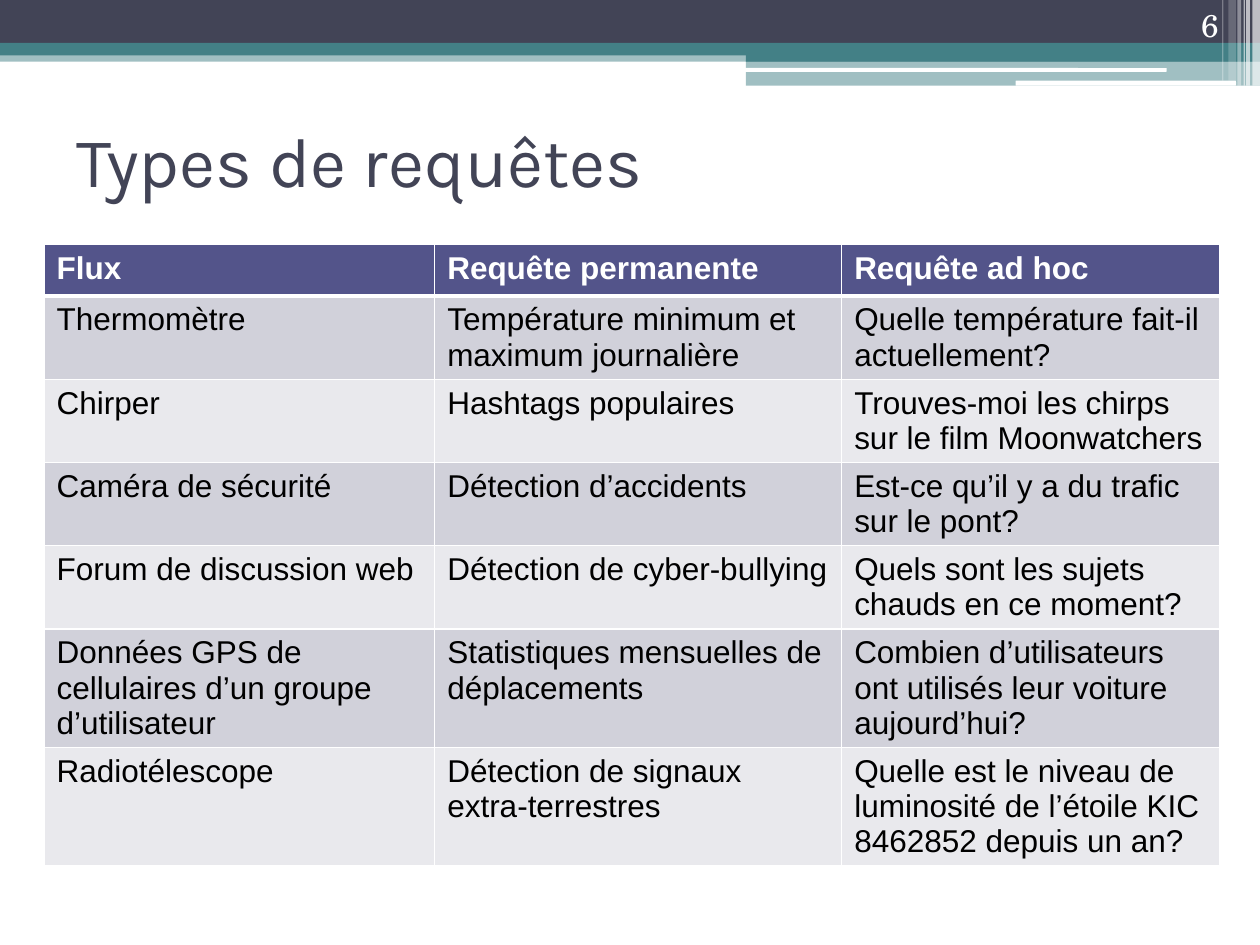
from lxml import etree
from pptx import Presentation
from pptx import util as u
from pptx.dml.color import RGBColor
from pptx.enum import shapes, text
from pptx.oxml.ns import qn

WHITE = RGBColor(0xFF, 0xFF, 0xFF)
BLACK = RGBColor(0, 0, 0)
SLATE = RGBColor(0x42, 0x44, 0x56)
TEAL = RGBColor(0x43, 0x80, 0x86)
INDIGO = RGBColor(0x53, 0x54, 0x8A)
ROW_FILLS = (RGBColor(0xE9, 0xE9, 0xED), RGBColor(0xD1, 0xD1, 0xDA))

COLS, ROWS = 10, 7.5
BANDS = [
    (0, 0.4, 10, 0.09, TEAL, 50),
    (0, 0, 10, 0.34, SLATE, 100),
    (0, 0.34, 10, 0.1, TEAL, 100),
    (5.92, 0.39, 4.08, 0.1, TEAL, 100),
    (5.92, 0.48, 4.08, 0.2, TEAL, 50),
]
PILLS = [(5.91, 0.54, 3.35, 0.03), (8.06, 0.64, 1.75, 0.04)]
STRIPES = [
    (9.94, 0.06, 0.68, 65),
    (9.89, 0.03, 0.68, 65),
    (9.87, 0.01, 0.68, 60),
    (9.82, 0.03, 0.68, 40),
    (9.75, 0.06, 0.64, 20),
    (9.7, 0.01, 0.64, 30),
]
QUERIES = [
    ("Flux", "Requête permanente", "Requête ad hoc"),
    ("Thermomètre", "Température minimum et maximum journalière",
     "Quelle température fait-il actuellement?"),
    ("Chirper", "Hashtags populaires",
     "Trouves-moi les chirps sur le film Moonwatchers"),
    ("Caméra de sécurité", "Détection d’accidents",
     "Est-ce qu’il y a du trafic sur le pont?"),
    ("Forum de discussion web", "Détection de cyber-bullying",
     "Quels sont les sujets chauds en ce moment?"),
    ("Données GPS de cellulaires d’un groupe d’utilisateur",
     "Statistiques mensuelles de déplacements",
     "Combien d’utilisateurs ont utilisés leur voiture aujourd’hui?"),
    ("Radiotélescope", "Détection de signaux extra-terrestres",
     "Quelle est le niveau de luminosité de l’étoile KIC 8462852 depuis un an?"),
]


class Deck:
    """Holds the style and the current slide, on a grid of 10 columns by 7.5 rows."""

    def __init__(self):
        self.prs = Presentation()
        self.prs.slide_width, self.prs.slide_height = u.Inches(COLS), u.Inches(ROWS)
        self.s = self.prs.slides.add_slide(self.prs.slide_layouts[5])

    def box(self, x, y, w, h):
        width, height = self.prs.slide_width, self.prs.slide_height
        return (int(width * x / COLS), int(height * y / ROWS),
                int(width * w / COLS), int(height * h / ROWS))

    def set_text(self, tf, words, font, size, color, bold=False,
                 align=text.PP_ALIGN.LEFT):
        tf.text = words
        p = tf.paragraphs[0]
        p.alignment = align
        r = p.runs[0]
        r.font.name, r.font.size, r.font.bold = font, u.Pt(size), bold
        r.font.color.rgb = color

    def band(self, x, y, w, h, color, opacity=100, rounded=False):
        kind = shapes.MSO_SHAPE.ROUNDED_RECTANGLE if rounded else shapes.MSO_SHAPE.RECTANGLE
        sp = self.s.shapes.add_shape(kind, *self.box(x, y, w, h))
        sp.shadow.inherit = False
        sp.line.fill.background()
        sp.fill.solid()
        sp.fill.fore_color.rgb = color
        if opacity < 100:
            clr = sp._element.spPr.find(".//" + qn("a:srgbClr"))
            etree.SubElement(clr, qn("a:alpha"), val=str(opacity * 1000))

    def title(self, words, *area):
        sp = self.s.shapes.title
        sp.left, sp.top, sp.width, sp.height = self.box(*area)
        self.set_text(sp.text_frame, words, "Karla", 40, SLATE)
        sp.text_frame.vertical_anchor = text.MSO_ANCHOR.MIDDLE

    def number(self, words, *area):
        tf = self.s.shapes.add_textbox(*self.box(*area)).text_frame
        tf.word_wrap = True
        tf.vertical_anchor = text.MSO_ANCHOR.BOTTOM
        self.set_text(tf, words, "TeX Gyre Schola", 18, WHITE,
                      align=text.PP_ALIGN.RIGHT)

    def border(self, cell, side, points):
        ln = etree.SubElement(cell._tc.get_or_add_tcPr(), qn("a:ln" + side),
                              w=str(int(u.Pt(points))))
        fill = etree.SubElement(ln, qn("a:solidFill"))
        etree.SubElement(fill, qn("a:srgbClr"), val=str(WHITE))

    def table(self, data, widths, row_height, *area):
        frame = self.s.shapes.add_table(len(data), len(widths), *self.box(*area))
        tbl = frame.table
        for col, w in zip(tbl.columns, widths):
            col.width = u.Inches(w)
        for i, (row, words) in enumerate(zip(tbl.rows, data)):
            row.height = u.Inches(row_height)
            head = i == 0
            for cell, value in zip(row.cells, words):
                self.set_text(cell.text_frame, value, "Arial", 18,
                              WHITE if head else BLACK, head)
                for side in "LRTB":
                    thick = (head and side == "B") or (i == 1 and side == "T")
                    self.border(cell, side, 3 if thick else 1)
                cell.fill.solid()
                cell.fill.fore_color.rgb = INDIGO if head else ROW_FILLS[i % 2]
        frame.height = self.box(*area)[3]


def main():
    deck = Deck()
    for band in BANDS:
        deck.band(*band)
    for pill in PILLS:
        deck.band(*pill, WHITE, rounded=True)
    for x, w, h, opacity in STRIPES:
        deck.band(x, 0, w, h, WHITE, opacity)
    deck.title("Types de requêtes", 0.51, 0.68, 9, 1.17)
    deck.table(QUERIES, (3.1, 3.23, 3), 0.41, 0.35, 1.94, 9.34, 5.21)
    deck.number("6", 8.94, 0, 0.83, 0.4)
    deck.prs.save("out.pptx")


if __name__ == "__main__":
    main()
